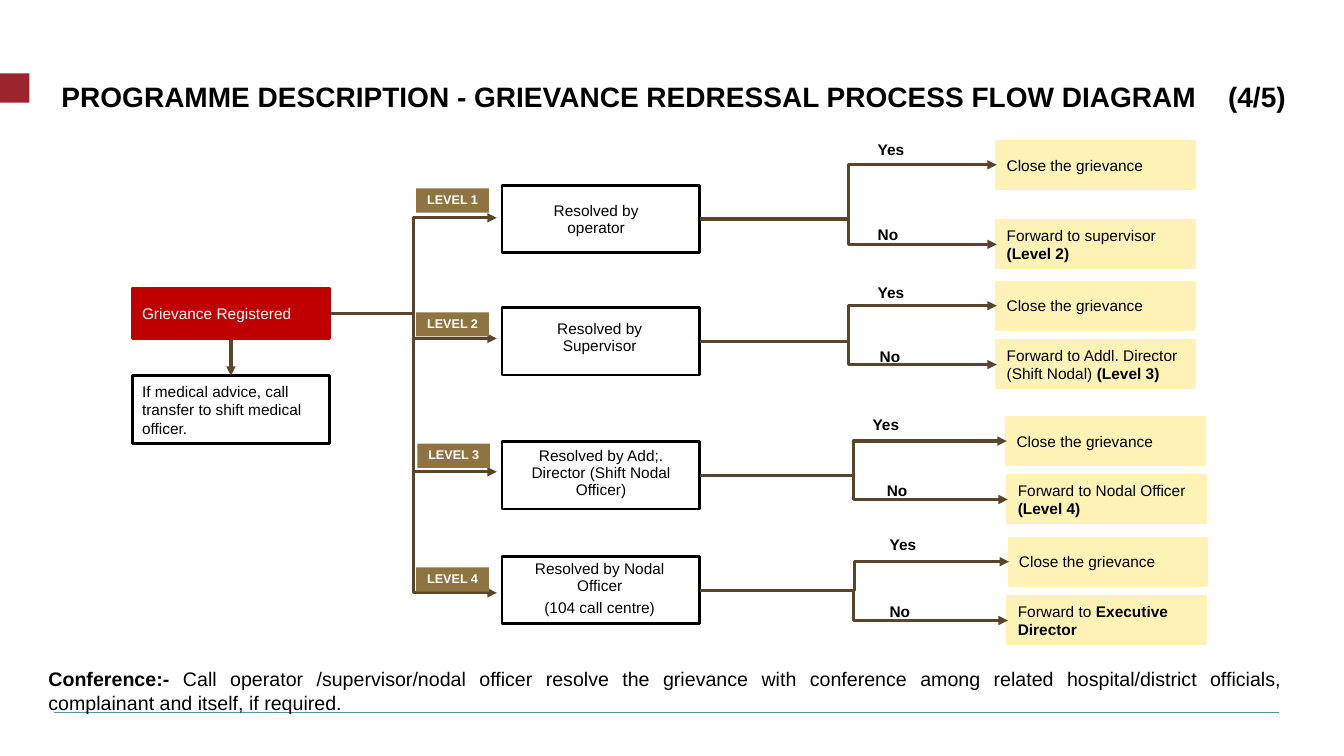
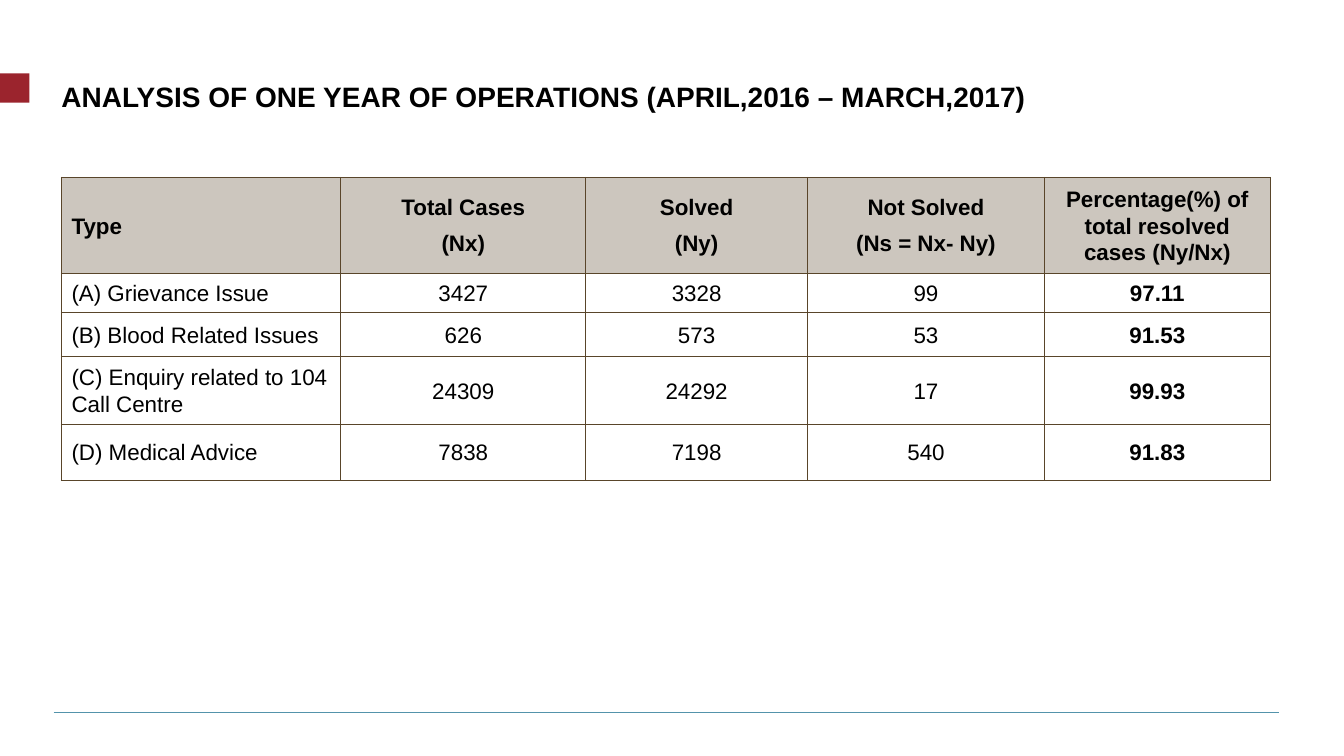
"""Build two slides on grievance redressal: the process flow and one year of results."""
from dataclasses import dataclass
from typing import NamedTuple

from lxml.etree import SubElement
from pptx import Presentation
from pptx.dml.color import RGBColor as Rgb
from pptx.enum.shapes import MSO_CONNECTOR as Link, MSO_SHAPE as Preset
from pptx.enum.text import MSO_ANCHOR as Anchor, PP_ALIGN as Align
from pptx.oxml.ns import qn
from pptx.presentation import Presentation as Deck
from pptx.shapes.autoshape import Shape
from pptx.shapes.connector import Connector
from pptx.slide import Slide
from pptx.text.text import TextFrame
from pptx.util import Cm, Pt


@dataclass(frozen=True)
class Theme:
    font: str = "Arial"
    ink: str = "000000"
    paper: str = "FFFFFF"
    accent: str = "9B242D"
    rule: str = "5393AB"
    start: str = "C00000"
    flow: str = "59452A"
    tag: str = "8E7441"
    outcome: str = "FFF2B7"
    header: str = "CCC6BE"
    title_size: float = 20
    table_size: float = 16
    note_size: float = 14
    flow_size: float = 11
    tag_size: float = 9


THEME = Theme()


class Box(NamedTuple):
    left: float
    top: float
    width: float
    height: float


class Point(NamedTuple):
    x: float
    y: float


class Span(NamedTuple):
    text: str
    bold: bool = False


Paragraphs = list[list[Span]]


@dataclass(frozen=True)
class Style:
    size: float = THEME.flow_size
    color: str = THEME.ink
    align: Align = Align.LEFT
    spacing: float | Pt | None = None
    after: float = 0


BODY = Style()
STEP = Style(align=Align.CENTER, spacing=0.9, after=4)
TAG = Style(THEME.tag_size, THEME.paper, Align.CENTER, 0.9)
TITLE = Style(THEME.title_size, spacing=Pt(30.7))
NOTE = Style(THEME.note_size, align=Align.JUSTIFY)


@dataclass(frozen=True)
class Answer:
    word: str
    word_at: Point
    outcome_at: Point
    outcome: list[Span]


@dataclass(frozen=True)
class Level:
    tag_at: Point
    step_top: float
    entry_y: float
    caption_box: Box
    caption: list[str]
    answers: tuple[Answer, Answer]


BOX_WIDTH, STEP_HEIGHT, OUTCOME_HEIGHT = 4.98, 1.7, 1.19
STEP_LEFT, ENTRY_X = 12.65, 12.52
CLOSE = [Span("Close the grievance")]

LEVELS = [
    Level(Point(10.49, 4.75), 4.67, 5.49, Box(13.54, 5, 2.97, 1.09),
          ["Resolved by operator"],
          (Answer("Yes", Point(21.87, 3.4), Point(25.12, 3.56), CLOSE),
           Answer("No", Point(21.87, 5.54), Point(25.12, 5.56),
                  [Span("Forward to supervisor "), Span("(Level 2)", True)]))),
    Level(Point(10.49, 7.87), 7.75, 8.53, Box(13.72, 7.98, 2.79, 1.09),
          ["Resolved by Supervisor"],
          (Answer("Yes", Point(21.87, 7.01), Point(25.12, 7.11), CLOSE),
           Answer("No", Point(21.92, 8.61), Point(25.12, 8.59),
                  [Span("Forward to Addl. Director (Shift Nodal) "),
                   Span("(Level 3)", True)]))),
    Level(Point(10.52, 11.18), 11.13, 11.89, Box(12.8, 11.18, 4.7, 1.52),
          ["Resolved by Add;. Director (Shift Nodal Officer)"],
          (Answer("Yes", Point(21.74, 10.34), Point(25.37, 10.52), CLOSE),
           Answer("No", Point(22.1, 12.01), Point(25.4, 11.99),
                  [Span("Forward to Nodal Officer "), Span("(Level 4)", True)]))),
    Level(Point(10.49, 14.3), 14.02, 14.94, Box(12.98, 14.02, 4.27, 1.7),
          ["Resolved by Nodal Officer", "(104 call centre)"],
          (Answer("Yes", Point(22.17, 13.36), Point(25.43, 13.56), CLOSE),
           Answer("No", Point(22.17, 15.04), Point(25.4, 15.04),
                  [Span("Forward to "), Span("Executive Director", True)]))),
]

HEADINGS = [
    ["Type"],
    ["Total Cases", "(Nx)"],
    ["Solved", "(Ny)"],
    ["Not Solved", "(Ns = Nx- Ny)"],
    ["Percentage(%) of total resolved cases (Ny/Nx)"],
]
CASES = [
    ("(A) Grievance Issue", "3427", "3328", "99", "97.11"),
    ("(B) Blood Related Issues", "626", "573", "53", "91.53"),
    ("(C) Enquiry related to 104 Call Centre", "24309", "24292", "17", "99.93"),
    ("(D) Medical Advice", "7838", "7198", "540", "91.83"),
]
COLUMN_WIDTHS = [7.04, 6.17, 5.59, 5.97, 5.69]
ROW_HEIGHTS = [2.24, 0.98, 1.11, 1.6, 1.42]


def write(frame: TextFrame, paragraphs: Paragraphs, style: Style) -> None:
    """Fill a text frame run by run."""
    frame.word_wrap = True
    for index, spans in enumerate(paragraphs):
        paragraph = frame.paragraphs[0] if index == 0 else frame.add_paragraph()
        paragraph.alignment = style.align
        paragraph.space_after = Pt(style.after)
        if style.spacing is not None:
            paragraph.line_spacing = style.spacing
        for span in spans:
            run = paragraph.add_run()
            run.text = span.text
            run.font.name = THEME.font
            run.font.size = Pt(style.size)
            run.font.bold = span.bold
            run.font.color.rgb = Rgb.from_string(style.color)


def add_text(slide: Slide, box: Box, paragraphs: Paragraphs, style: Style) -> TextFrame:
    """Add a text box and return its frame."""
    frame = slide.shapes.add_textbox(*map(Cm, box)).text_frame
    write(frame, paragraphs, style)
    return frame


def add_block(slide: Slide, box: Box, fill: str | None = None, edge: str | None = None,
              spans: list[Span] | None = None, style: Style = BODY,
              anchor: Anchor = Anchor.MIDDLE) -> Shape:
    """Add a rectangle with an optional fill, edge and text."""
    block = slide.shapes.add_shape(Preset.RECTANGLE, *map(Cm, box))
    block.shadow.inherit = False
    if fill:
        block.fill.solid()
        block.fill.fore_color.rgb = Rgb.from_string(fill)
    else:
        block.fill.background()
    if edge:
        block.line.color.rgb = Rgb.from_string(edge)
        block.line.width = Pt(2)
    else:
        block.line.fill.background()
    if spans:
        block.text_frame.vertical_anchor = anchor
        write(block.text_frame, [spans], style)
    return block


def add_link(slide: Slide, kind: Link, begin: Point, end: Point, color: str = THEME.flow,
             width: float = 2.25, arrow: bool = True) -> Connector:
    """Add a connector without a shadow."""
    link = slide.shapes.add_connector(kind, *map(Cm, (*begin, *end)))
    link.line.color.rgb = Rgb.from_string(color)
    link.line.width = Pt(width)
    properties = link.element.spPr
    if arrow:
        SubElement(properties.find(qn("a:ln")), qn("a:tailEnd"), type="triangle")
    SubElement(properties, qn("a:effectLst"))
    return link


def join(slide: Slide, kind: Link, source: Shape, exit_side: int,
         target: Shape, entry_side: int) -> None:
    """Link two blocks from side to side."""
    link = add_link(slide, kind, Point(0, 0), Point(0, 0))
    link.begin_connect(source, exit_side)
    link.end_connect(target, entry_side)


def start_slide(deck: Deck, title: str, tab: float | None = None) -> Slide:
    """Add a blank slide with the shared accent, rule and title."""
    slide = deck.slides.add_slide(deck.slide_layouts[6])
    add_block(slide, Box(0, 1.85, 0.74, 0.74), THEME.accent)
    add_link(slide, Link.STRAIGHT, Point(1.35, 17.96), Point(32.23, 17.96),
             THEME.rule, 0.5, False)
    frame = add_text(slide, Box(1.55, 1.78, 31, 0.99), [[Span(title, True)]], TITLE)
    frame.margin_left = frame.margin_right = frame.margin_top = frame.margin_bottom = 0
    if tab is not None:
        properties = frame.paragraphs[0]._p.get_or_add_pPr()
        stops = SubElement(properties, qn("a:tabLst"))
        SubElement(stops, qn("a:tab"), pos=str(int(Cm(tab))), algn="l")
    return slide


def draw_level(slide: Slide, number: int, level: Level) -> None:
    """Draw one escalation level with its two outcomes."""
    add_block(slide, Box(*level.tag_at, 1.83, 0.61), THEME.tag,
              spans=[Span(f"LEVEL {number}", True)], style=TAG, anchor=Anchor.TOP)
    step = add_block(slide, Box(STEP_LEFT, level.step_top, BOX_WIDTH, STEP_HEIGHT),
                     edge=THEME.ink)
    add_text(slide, level.caption_box, [[Span(line)] for line in level.caption], STEP)
    for answer in level.answers:
        outcome = add_block(slide, Box(*answer.outcome_at, BOX_WIDTH, OUTCOME_HEIGHT),
                            THEME.outcome, THEME.outcome, answer.outcome)
        join(slide, Link.ELBOW, step, 3, outcome, 1)
        add_text(slide, Box(*answer.word_at, 1.4, 0.74), [[Span(answer.word, True)]], BODY)


def draw_flow(deck: Deck) -> None:
    """Build the process flow slide."""
    slide = start_slide(deck, "PROGRAMME DESCRIPTION - GRIEVANCE REDRESSAL PROCESS "
                              "FLOW DIAGRAM\t(4/5)", 29.4)
    registered = add_block(slide, Box(3.33, 7.26, BOX_WIDTH, 1.27), THEME.start, THEME.start,
                           [Span("Grievance Registered")], Style(color=THEME.paper))
    medical = add_block(slide, Box(3.33, 9.47, BOX_WIDTH, STEP_HEIGHT), edge=THEME.ink, spans=[
        Span("If medical advice, call transfer to shift medical officer.")])
    join(slide, Link.STRAIGHT, registered, 2, medical, 0)
    for level in LEVELS:
        add_link(slide, Link.ELBOW, Point(8.31, 7.9), Point(ENTRY_X, level.entry_y))
    for number, level in enumerate(LEVELS, 1):
        draw_level(slide, number, level)
    add_text(slide, Box(0.97, 16.69, 31.6, 1.45), [[
        Span("Conference:- ", True),
        Span("Call operator /supervisor/nodal officer resolve the grievance with conference "
             "among related hospital/district officials, complainant and itself, if required."),
    ]], NOTE)


def draw_analysis(deck: Deck) -> None:
    """Build the slide with the table of cases."""
    slide = start_slide(deck, "ANALYSIS OF ONE YEAR OF OPERATIONS (APRIL,2016 – MARCH,2017)")
    rows = [HEADINGS] + [[[value] for value in case] for case in CASES]
    area = Box(1.55, 4.47, sum(COLUMN_WIDTHS), sum(ROW_HEIGHTS))
    table = slide.shapes.add_table(len(rows), len(HEADINGS), *map(Cm, area)).table
    table.first_row = table.horz_banding = False
    for column, width in zip(table.columns, COLUMN_WIDTHS):
        column.width = Cm(width)
    for row, height in zip(table.rows, ROW_HEIGHTS):
        row.height = Cm(height)
    for row_index, row in enumerate(rows):
        for column_index, lines in enumerate(row):
            cell = table.cell(row_index, column_index)
            properties = cell._tc.get_or_add_tcPr()
            for side in ("lnL", "lnR", "lnT", "lnB"):
                border = SubElement(properties, qn(f"a:{side}"), w=str(int(Pt(1))))
                paint = SubElement(border, qn("a:solidFill"))
                SubElement(paint, qn("a:srgbClr"), val=THEME.flow)
            if row_index == 0:
                cell.fill.solid()
                cell.fill.fore_color.rgb = Rgb.from_string(THEME.header)
            else:
                cell.fill.background()
            cell.vertical_anchor = Anchor.MIDDLE
            bold = row_index == 0 or column_index == len(row) - 1
            write(cell.text_frame, [[Span(line, bold)] for line in lines], Style(
                THEME.table_size,
                align=Align.CENTER if column_index else Align.LEFT,
                spacing=1.07 if len(lines) == 1 else None, after=8))


def main() -> None:
    """Build and save the deck."""
    deck = Presentation()
    deck.slide_width, deck.slide_height = Cm(33.87), Cm(19.05)
    draw_flow(deck)
    draw_analysis(deck)
    deck.save("out.pptx")


if __name__ == "__main__":
    main()
